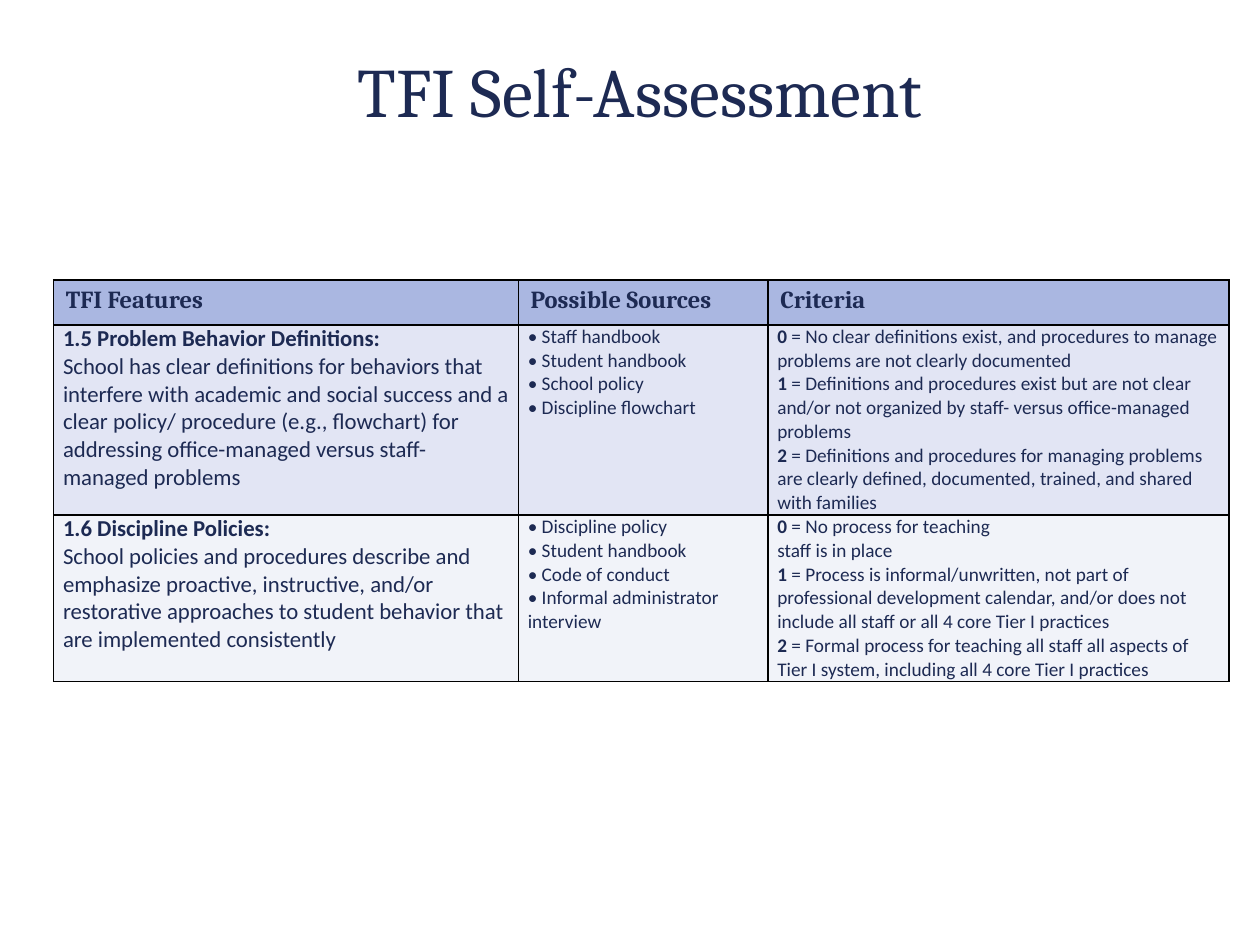
from typing import NamedTuple

from lxml.etree import SubElement
from pptx import Presentation
from pptx.dml.color import RGBColor
from pptx.enum.text import MSO_ANCHOR, PP_ALIGN
from pptx.oxml.ns import qn
from pptx.util import Cm, Pt

COLOURS = {
    "text": "1D2A53",
    "header": "AAB7E1",
    "odd": "E2E5F4",
    "even": "F1F3F9",
    "border": "000000",
}
COLUMN_WIDTHS = (9.37, 5.03, 9.3)
ROW_HEIGHTS = (0.91, 3.68, 2.64)
HEADINGS = ("TFI Features", "Possible Sources", "Criteria")


class Feature(NamedTuple):
    name: str
    description: str
    sources: tuple[str, ...]
    criteria: tuple[str, ...]
    fill: str


FEATURES = (
    Feature(
        "1.5 Problem Behavior Definitions:",
        "School has clear definitions for behaviors that interfere with academic and "
        "social success and a clear policy/ procedure (e.g., flowchart) for addressing "
        "office-managed versus staff-managed problems",
        ("Staff handbook", "Student handbook", "School policy", "Discipline flowchart"),
        (
            "0 = No clear definitions exist, and procedures to manage problems are "
            "not clearly documented",
            "1 = Definitions and procedures exist but are not clear and/or not "
            "organized by staff- versus office-managed problems",
            "2 = Definitions and procedures for managing problems are clearly defined, "
            "documented, trained, and shared with families",
        ),
        "odd",
    ),
    Feature(
        "1.6 Discipline Policies:",
        "School policies and procedures describe and emphasize proactive, instructive, "
        "and/or restorative approaches to student behavior that are implemented "
        "consistently",
        ("Discipline policy", "Student handbook", "Code of conduct",
         "Informal administrator interview"),
        (
            "0 = No process for teaching",
            "staff is in place",
            "1 = Process is informal/unwritten, not part of professional development "
            "calendar, and/or does not include all staff or all 4 core Tier I practices",
            "2 = Formal process for teaching all staff all aspects of Tier I system, "
            "including all 4 core Tier I practices",
        ),
        "even",
    ),
)


def colour(name: str) -> RGBColor:
    return RGBColor.from_string(COLOURS[name])


def set_font(paragraph, name: str, size: float, bold: bool = False) -> None:
    font = paragraph.font
    font.name, font.size, font.bold = name, Pt(size), bold
    font.color.rgb = colour("text")


def add_borders(cell) -> None:
    properties = cell._tc.get_or_add_tcPr()
    for position, side in enumerate(("lnL", "lnR", "lnT", "lnB")):
        line = SubElement(properties, qn(f"a:{side}"), w=str(Pt(1)))
        fill = SubElement(line, qn("a:solidFill"))
        SubElement(fill, qn("a:srgbClr"), val=COLOURS["border"])
        properties.insert(position, line)


def format_cell(cell, fill: str, side: float, vertical: float) -> None:
    cell.fill.solid()
    cell.fill.fore_color.rgb = colour(fill)
    cell.margin_left = cell.margin_right = Cm(side)
    cell.margin_top = cell.margin_bottom = Cm(vertical)
    add_borders(cell)


def write_cell(cell, lines: list[list[tuple[str, bool]]], font: str, size: float) -> None:
    """Write one paragraph for each line of (text, bold) spans."""
    frame = cell.text_frame
    for index, spans in enumerate(lines):
        paragraph = frame.add_paragraph() if index else frame.paragraphs[0]
        set_font(paragraph, font, size)
        for text, bold in spans:
            span = paragraph.add_run()
            span.text = text
            span.font.name, span.font.size, span.font.bold = font, Pt(size), bold
            span.font.color.rgb = colour("text")


def criterion_spans(criterion: str) -> list[tuple[str, bool]]:
    """Make the score before the equals sign bold."""
    score, sign, meaning = criterion.partition(" = ")
    return [(score, True), (sign + meaning, False)] if sign else [(criterion, False)]


def add_title(page, text: str) -> None:
    title = page.shapes.title
    title.left, title.top, title.width, title.height = Cm(2.54), Cm(0.81), Cm(20.73), Cm(2.01)
    title.text_frame.text = text
    title.text_frame.vertical_anchor = MSO_ANCHOR.MIDDLE
    paragraph = title.text_frame.paragraphs[0]
    paragraph.alignment = PP_ALIGN.CENTER
    set_font(paragraph, "Cambria", 39.6)


def add_feature_table(page) -> None:
    table = page.shapes.add_table(
        len(ROW_HEIGHTS), len(COLUMN_WIDTHS),
        Cm(1.08), Cm(5.64), Cm(sum(COLUMN_WIDTHS)), Cm(sum(ROW_HEIGHTS)),
    ).table
    for column, width in zip(table.columns, COLUMN_WIDTHS):
        column.width = Cm(width)
    for row, height in zip(table.rows, ROW_HEIGHTS):
        row.height = Cm(height)

    for cell, heading in zip(table.rows[0].cells, HEADINGS):
        format_cell(cell, "header", 0.25, 0.13)
        write_cell(cell, [[(heading, True)]], "Cambria", 14)

    for row_index, feature in enumerate(FEATURES, start=1):
        contents = (
            ([[(feature.name, True)], [(feature.description, False)]], 13),
            ([[(f"• {source}", False)] for source in feature.sources], 11),
            ([criterion_spans(criterion) for criterion in feature.criteria], 11),
        )
        for cell, (lines, size) in zip(table.rows[row_index].cells, contents):
            format_cell(cell, feature.fill, 0.19, 0)
            write_cell(cell, lines, "Calibri", size)


def main() -> None:
    deck = Presentation()
    deck.slide_width, deck.slide_height = Cm(25.4), Cm(19.05)
    page = deck.slides.add_slide(deck.slide_layouts[5])
    add_feature_table(page)
    add_title(page, "TFI Self-Assessment")
    deck.save("out.pptx")


if __name__ == "__main__":
    main()
